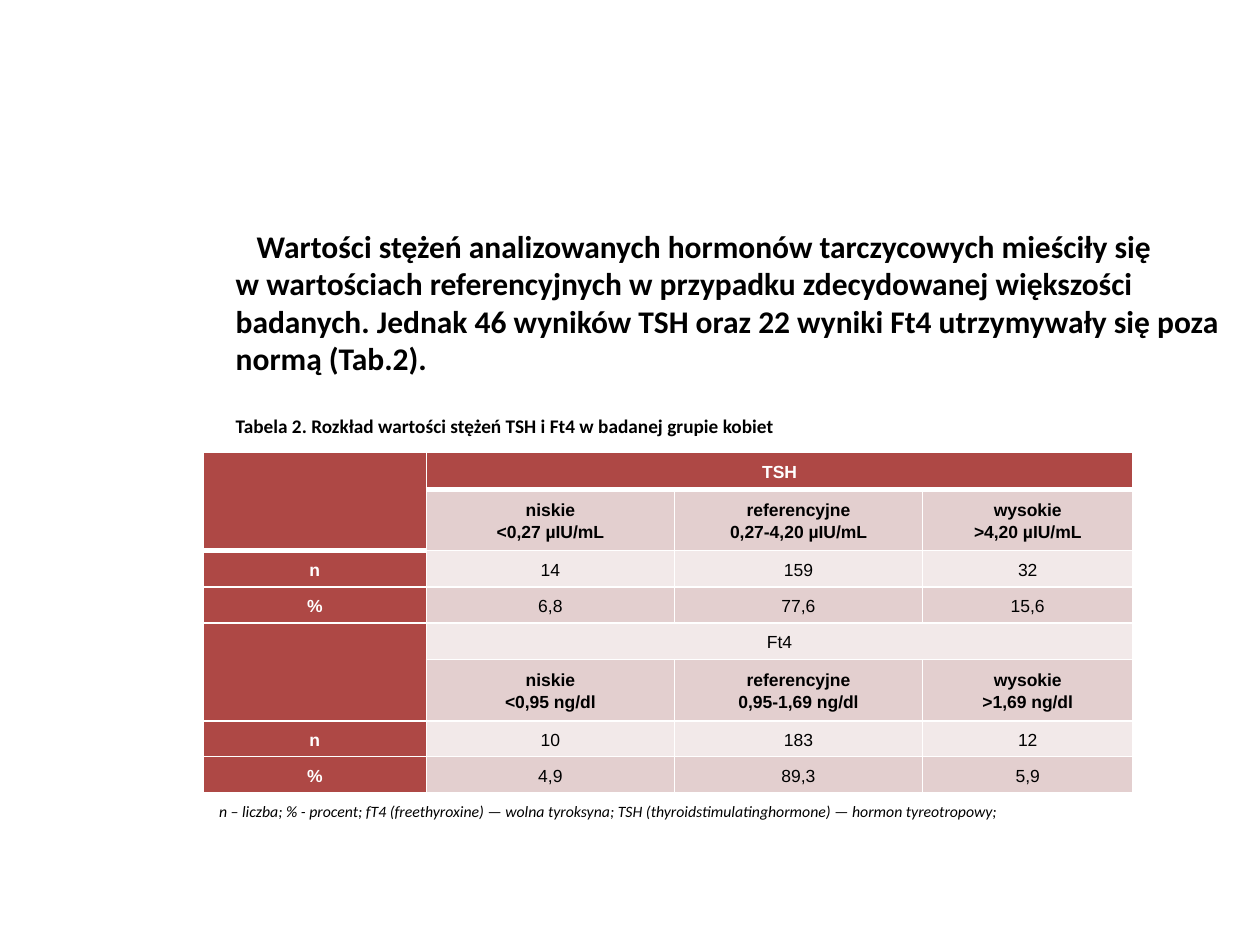
import pptx
import pptx.dml.color
import pptx.enum.text
import pptx.oxml
import pptx.oxml.ns
import pptx.util

Pt = pptx.util.Pt
ALIGN = pptx.enum.text.PP_ALIGN
ANCHOR = pptx.enum.text.MSO_ANCHOR
FIT = pptx.enum.text.MSO_AUTO_SIZE


def apply_format(target, values, color=None):
    """Set each attribute in values; color is a hex string for a font or a fill."""
    for name, value in values.items():
        setattr(target, name, value)
    if color:
        holder = target.color if hasattr(target, "color") else target.fore_color
        holder.rgb = pptx.dml.color.RGBColor.from_string(color)


def add_border(cell, side, width):
    line = pptx.oxml.parse_xml(
        f'<a:{side} {pptx.oxml.ns.nsdecls("a")} w="{Pt(width)}">'
        f'<a:solidFill><a:srgbClr val="FFFFFF"/></a:solidFill></a:{side}>')
    cell._tc.get_or_add_tcPr().append(line)


deck = pptx.Presentation()
apply_format(deck, {"slide_width": Pt(720), "slide_height": Pt(540)})
page = deck.slides.add_slide(deck.slide_layouts[5])

# Statement and table caption
title = page.shapes.title
apply_format(title, {"left": Pt(127.5), "top": Pt(122.4), "width": Pt(592.5), "height": Pt(80)})
apply_format(title.text_frame, {
    "word_wrap": True, "auto_size": FIT.NONE, "vertical_anchor": ANCHOR.TOP,
    "margin_left": Pt(7.2), "margin_right": Pt(7.2), "margin_top": Pt(7.5)})
statement = (
    "Wartości stężeń analizowanych hormonów tarczycowych mieściły się\v"
    "w wartościach referencyjnych w przypadku zdecydowanej większości badanych. "
    "Jednak 46 wyników TSH oraz 22 wyniki Ft4 utrzymywały się poza normą (Tab.2).")
caption = "Tabela 2. Rozkład wartości stężeń TSH i Ft4 w badanej grupie kobiet"
title.text_frame.text = statement + "\n" + caption
statement_para, caption_para = title.text_frame.paragraphs
statement_para._p.get_or_add_pPr().set("indent", str(Pt(12)))
for para, size, spacing in (
        (statement_para, 18, {"line_spacing": Pt(21.4)}),
        (caption_para, 11, {"space_before": Pt(21)})):
    apply_format(para, {"alignment": ALIGN.LEFT, **spacing})
    for span in para.runs:
        apply_format(span.font, {"name": "Calibri", "size": Pt(size), "bold": True}, "000000")

# Hormone table: None marks a cell covered by a merge
RED, ROSE, PALE = "AE4845", "E3CFCF", "F2E9E9"
rows = [
    ["", "TSH", None, None],
    [None, "niskie\n<0,27 µIU/mL", "referencyjne\n0,27-4,20 µIU/mL", "wysokie\n>4,20 µIU/mL"],
    ["n", "14", "159", "32"],
    ["%", "6,8", "77,6", "15,6"],
    ["", "Ft4", None, None],
    [None, "niskie\n<0,95 ng/dl", "referencyjne\n0,95-1,69 ng/dl", "wysokie\n>1,69 ng/dl"],
    ["n", "10", "183", "12"],
    ["%", "4,9", "89,3", "5,9"],
]
column_widths = [127.4, 141.8, 141.8, 120.2]
row_heights = [21, 35, 20.7, 20.7, 20.7, 35.3, 20.3, 20.7]
thick_below = {(0, 0), (0, 1), (0, 2), (0, 3), (1, 0)}

table = page.shapes.add_table(
    len(rows), len(column_widths), Pt(116.2), Pt(258.7),
    Pt(sum(column_widths)), Pt(sum(row_heights))).table
for column, width in zip(table.columns, column_widths):
    column.width = Pt(width)
for row, height in zip(table.rows, row_heights):
    row.height = Pt(height)
for top in (0, 4):
    table.cell(top, 0).merge(table.cell(top + 1, 0))
    table.cell(top, 1).merge(table.cell(top, 3))

for r, texts in enumerate(rows):
    for c, text in enumerate(texts):
        cell = table.cell(r, c)
        header = r == 0 or c == 0
        apply_format(cell, {
            "vertical_anchor": ANCHOR.MIDDLE, "margin_left": Pt(5), "margin_right": Pt(5),
            "margin_top": 0, "margin_bottom": 0})
        for side in ("lnL", "lnR", "lnT", "lnB"):
            thick = (side == "lnB" and (r, c) in thick_below
                     or side == "lnT" and c * r != 0 and (r - 1, c) in thick_below
                     or side == "lnT" and (r, c) == (2, 0))
            add_border(cell, side, 3 if thick else 1)
        cell.fill.solid()
        apply_format(cell.fill, {}, RED if header else ROSE if r % 2 else PALE)
        cell.text = text or ""
        for para in cell.text_frame.paragraphs:
            apply_format(para, {"alignment": ALIGN.CENTER, "line_spacing": 1.15})
            apply_format(para.font, {"name": "Arial", "size": Pt(10)})
            for span in para.runs:
                apply_format(span.font, {
                    "name": "Arial", "size": Pt(10), "bold": header or r in (1, 5)},
                    "FFFFFF" if header else "000000")

# Abbreviations below the table
note = page.shapes.add_textbox(Pt(116.2), Pt(454.5), Pt(570), Pt(18))
apply_format(note.text_frame, {
    "word_wrap": True, "auto_size": FIT.SHAPE_TO_FIT_TEXT,
    "vertical_anchor": ANCHOR.MIDDLE, "margin_left": Pt(9)})
para = note.text_frame.paragraphs[0]
para.alignment = ALIGN.JUSTIFY
span = para.add_run()
span.text = ("n – liczba; % - procent; fT4 (freethyroxine) — wolna tyroksyna; "
             "TSH (thyroidstimulatinghormone) — hormon tyreotropowy;")
apply_format(span.font, {"name": "Calibri", "size": Pt(9), "italic": True}, "000000")

deck.save("out.pptx")
